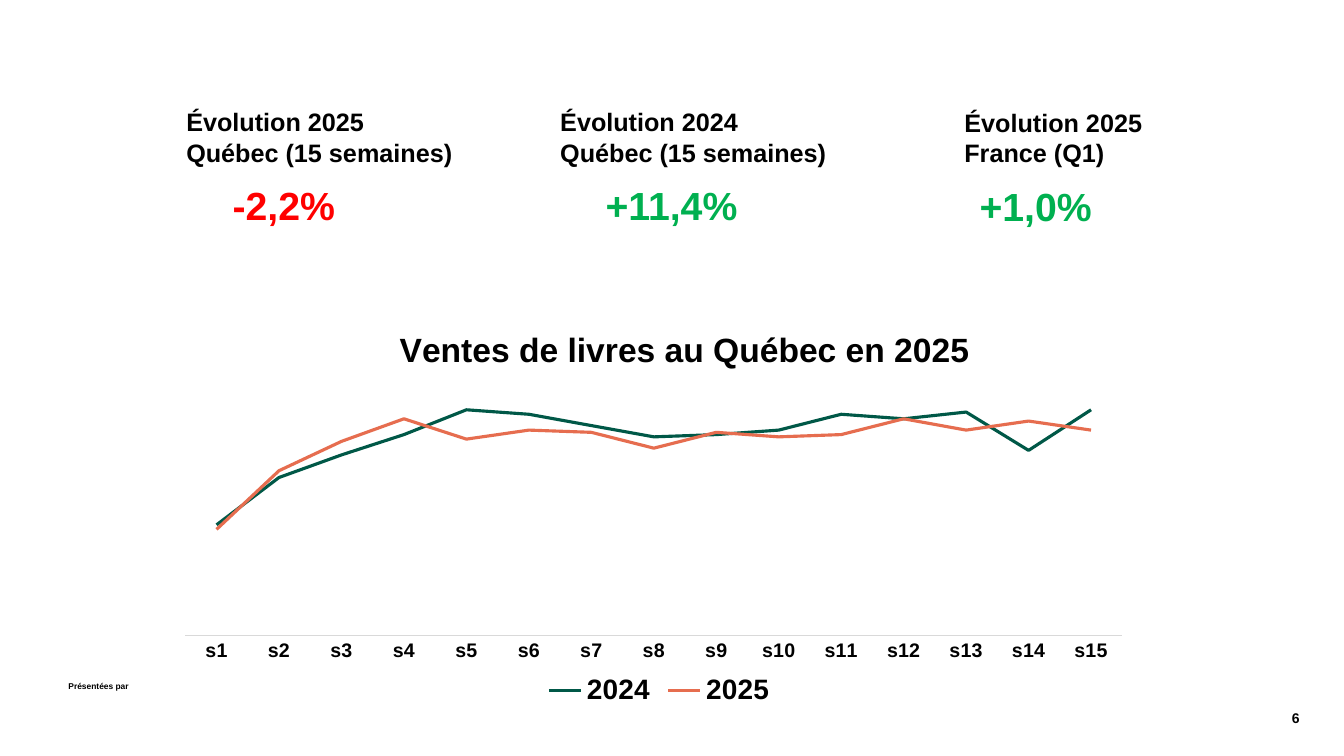
from lxml import etree
from pptx import Presentation
from pptx.chart.data import CategoryChartData
from pptx.dml.color import RGBColor
from pptx.enum.chart import XL_CHART_TYPE, XL_LEGEND_POSITION, XL_MARKER_STYLE, XL_TICK_MARK
from pptx.enum.text import PP_ALIGN
from pptx.util import Pt

LINE_CHART = XL_CHART_TYPE.LINE
LEGEND_BOTTOM = XL_LEGEND_POSITION.BOTTOM
NO_MARKER = XL_MARKER_STYLE.NONE
NO_TICK = XL_TICK_MARK.NONE
LEFT, RIGHT = PP_ALIGN.LEFT, PP_ALIGN.RIGHT

FONT = "Arial"
BLACK, RED, GREEN = "000000", "FF0000", "00B050"
CHART_NS = "http://schemas.openxmlformats.org/drawingml/2006/chart"

# Heading lines, heading box, figure, figure colour, figure box (left, top, width, height)
EVOLUTIONS = [
    (["Évolution 2025", "Québec (15 semaines)"], (126, 72.7, 206.6, 51),
     "-2,2%", RED, (159.1, 126, 89.3, 41)),
    (["Évolution 2024", "Québec (15 semaines)"], (393.1, 72.7, 206.6, 51),
     "+11,4%", GREEN, (425.5, 126, 114.5, 41)),
    (["Évolution 2025", "France (Q1)"], (681.8, 73.1, 141.8, 51),
     "+1,0%", GREEN, (692.6, 126.5, 114.5, 41)),
]

# Weekly sales: year, line colour, values
SALES = [
    ("2024", "005847", [49, 70, 80, 89, 100, 98, 93, 88, 89, 91, 98, 96, 99, 82, 100]),
    ("2025", "E66D4F", [47, 73, 86, 96, 87, 91, 90, 83, 90, 88, 89, 96, 91, 95, 91]),
]


def rgb(hex_colour):
    return RGBColor.from_string(hex_colour)


def style_font(font, size, colour=BLACK):
    font.name = FONT
    font.size = Pt(size)
    font.bold = True
    font.color.rgb = rgb(colour)


def add_text(slide, box, lines, size, colour=BLACK, align=LEFT, wrap=True):
    frame = slide.shapes.add_textbox(*map(Pt, box)).text_frame
    frame.word_wrap = wrap
    for index, line in enumerate(lines):
        paragraph = frame.add_paragraph() if index else frame.paragraphs[0]
        paragraph.alignment = align
        run = paragraph.add_run()
        run.text = line
        style_font(run.font, size, colour)


def chart_layout(target=None, **fractions):
    """Build a manual layout from fractions of the chart area."""
    layout = etree.Element(f"{{{CHART_NS}}}layout")
    manual = etree.SubElement(layout, f"{{{CHART_NS}}}manualLayout")
    settings = [("layoutTarget", target)] if target else []
    settings += [("xMode", "edge"), ("yMode", "edge"), *fractions.items()]
    for tag, value in settings:
        etree.SubElement(manual, f"{{{CHART_NS}}}{tag}").set("val", str(value))
    return layout


def place_chart_part(part, layout, index):
    for old_layout in part.findall(f"{{{CHART_NS}}}layout"):
        part.remove(old_layout)
    part.insert(index, layout)


def add_sales_chart(slide, box):
    sales = CategoryChartData()
    sales.categories = [f"s{week}" for week in range(1, 16)]
    for year, _, values in SALES:
        sales.add_series(year, values)
    chart = slide.shapes.add_chart(LINE_CHART, *map(Pt, box), sales).chart
    style_font(chart.font, 10)

    # Title
    chart.has_title = True
    heading = chart.chart_title.text_frame.paragraphs[0].add_run()
    heading.text = "Ventes de livres au Québec en 2025"
    style_font(heading.font, 24)
    chart.chart_title.include_in_layout = False

    # Year lines
    for series, (_, colour, _) in zip(chart.plots[0].series, SALES):
        series.smooth = False
        series.marker.style = NO_MARKER
        series.format.line.color.rgb = rgb(colour)
        series.format.line.width = Pt(2.25)

    # Axes
    weeks = chart.category_axis
    weeks.major_tick_mark = NO_TICK
    weeks.format.line.color.rgb = rgb("D9D9D9")
    weeks.format.line.width = Pt(0.75)
    style_font(weeks.tick_labels.font, 14)
    dollars = chart.value_axis
    dollars.minimum_scale, dollars.maximum_scale = 0, 115
    dollars.has_major_gridlines = False
    dollars.tick_labels.number_format = '#\\ ##0\\ "$"'
    dollars.tick_labels.number_format_is_linked = False
    dollars.visible = False

    # Legend
    chart.has_legend = True
    chart.legend.position = LEGEND_BOTTOM
    chart.legend.include_in_layout = False
    style_font(chart.legend.font, 20)

    # Places of the title and the plot
    root = chart.element
    place_chart_part(root.find(f".//{{{CHART_NS}}}title"), chart_layout(x=0.25, y=0.02), 1)
    place_chart_part(root.find(f".//{{{CHART_NS}}}plotArea"),
                     chart_layout("inner", x=0.054, y=0.157, w=0.882, h=0.652), 0)


def main():
    deck = Presentation()
    deck.slide_width, deck.slide_height = Pt(960), Pt(540)
    slide = deck.slides.add_slide(deck.slide_layouts[6])

    # Footer
    add_text(slide, (41.8, 483.1, 58.3, 14.4), ["Présentées par"], 6, wrap=False)
    add_text(slide, (772.6, 503.3, 162.7, 19.4), ["6"], 10, align=RIGHT)

    add_sales_chart(slide, (91.4, 223.9, 758.9, 284.4))

    # Key figures
    for heading, heading_box, figure, colour, figure_box in EVOLUTIONS:
        add_text(slide, heading_box, heading, 18)
        add_text(slide, figure_box, [figure], 28, colour)

    deck.save("out.pptx")


if __name__ == "__main__":
    main()
